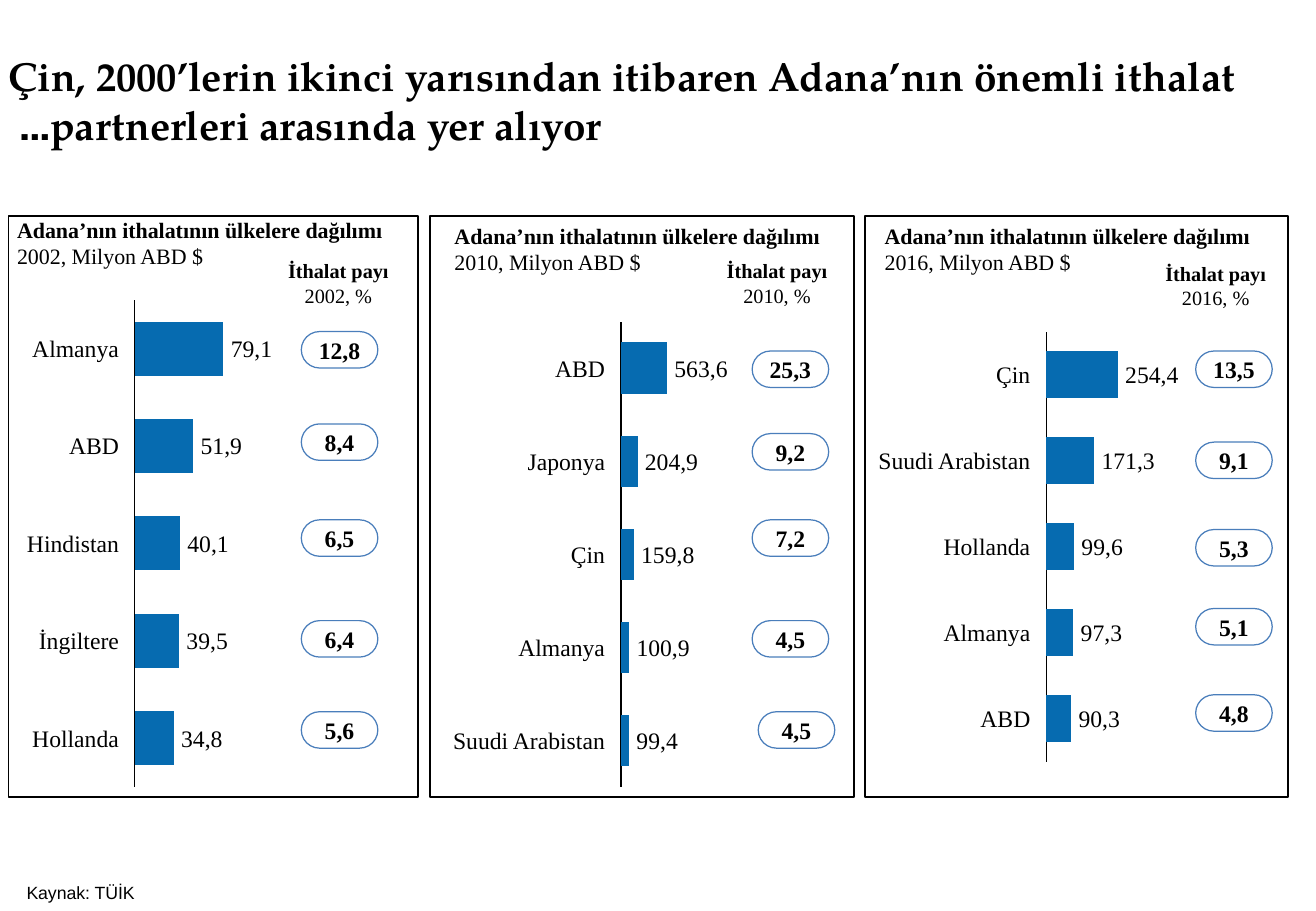
"""Build the slide on Adana's imports by partner country."""
from lxml import etree
from pptx import Presentation
from pptx.chart.data import CategoryChartData
from pptx.dml.color import RGBColor
from pptx.enum.chart import XL_CHART_TYPE, XL_TICK_LABEL_POSITION, XL_TICK_MARK
from pptx.enum.shapes import MSO_SHAPE
from pptx.enum.text import MSO_ANCHOR, PP_ALIGN
from pptx.oxml.ns import qn
from pptx.util import Inches, Pt

BLACK = RGBColor(0x00, 0x00, 0x00)
WHITE = RGBColor(0xFF, 0xFF, 0xFF)
BLUE = RGBColor(0x06, 0x6B, 0xB0)
EDGE = RGBColor(0x4A, 0x7E, 0xBB)
LEFT, MID, RIGHT = PP_ALIGN.LEFT, PP_ALIGN.CENTER, PP_ALIGN.RIGHT
TOP, CENTER = MSO_ANCHOR.TOP, MSO_ANCHOR.MIDDLE
RECT, ROUND = MSO_SHAPE.RECTANGLE, MSO_SHAPE.ROUNDED_RECTANGLE
STACKED = XL_CHART_TYPE.BAR_STACKED
NO_TICK, NO_LABEL = XL_TICK_MARK.NONE, XL_TICK_LABEL_POSITION.NONE
SERIF, SANS, HEAD = "Times New Roman", "Arial", "TeX Gyre Pagella"

MARGIN = 0.09
WIDTHS = {"Almanya": 0.76, "ABD": 0.46, "Hindistan": 0.81, "İngiltere": 0.71,
          "Hollanda": 0.76, "Japonya": 0.69, "Çin": 0.33, "Suudi Arabistan": 1.3}
PANELS = [
    {"year": "2002", "frame": (0.07, 3.37), "chart": (1.02, 2.38, 0.91, 4.19),
     "head": (0.14, 1.78), "share": (2.19, 2.13),
     "rows": [("Almanya", 100, "79,1", "12,8", 2.48, 2.73),
              ("ABD", 66, "51,9", "8,4", 2.48, 3.49),
              ("Hindistan", 51, "40,1", "6,5", 2.48, 4.28),
              ("İngiltere", 50, "39,5", "6,4", 2.48, 5.11),
              ("Hollanda", 44, "34,8", "5,6", 2.48, 5.86)]},
    {"year": "2010", "frame": (3.54, 3.49), "chart": (5.02, 2.56, 0.56, 4.01),
     "head": (3.74, 1.83), "share": (5.8, 2.13),
     "rows": [("ABD", 100, "563,6", "25,3", 6.19, 2.89),
              ("Japonya", 36, "204,9", "9,2", 6.19, 3.57),
              ("Çin", 28, "159,8", "7,2", 6.19, 4.28),
              ("Almanya", 18, "100,9", "4,5", 6.19, 5.11),
              ("Suudi Arabistan", 18, "99,4", "4,5", 6.24, 5.86)]},
    {"year": "2016", "frame": (7.12, 3.48), "chart": (8.52, 2.64, 0.77, 3.72),
     "head": (7.28, 1.83), "share": (9.41, 2.15),
     "rows": [("Çin", 100, "254,4", "13,5", 9.84, 2.89),
              ("Suudi Arabistan", 67, "171,3", "9,1", 9.84, 3.64),
              ("Hollanda", 39, "99,6", "5,3", 9.84, 4.36),
              ("Almanya", 38, "97,3", "5,1", 9.84, 5.01),
              ("ABD", 35, "90,3", "4,8", 9.84, 5.72)]},
]


class Slide:
    """Hold the current slide and draw its elements in one style."""

    def __init__(self, deck):
        self.shapes = deck.slides.add_slide(deck.slide_layouts[6]).shapes

    def fill(self, shape, lines, size, bold=(False,), font=SERIF, align=LEFT,
             anchor=TOP, pad=(0, 0), wrap=True):
        frame = shape.text_frame
        frame.text = "\n".join(lines)
        frame.word_wrap = wrap
        frame.vertical_anchor = anchor
        frame.margin_left = frame.margin_right = Inches(pad[0])
        frame.margin_top = frame.margin_bottom = Inches(pad[1])
        for para, heavy in zip(frame.paragraphs, bold):
            para.alignment = align
            for run in para.runs:
                run.font.name = font
                run.font.size = Pt(size)
                run.font.bold = heavy
                run.font.color.rgb = BLACK
        return frame

    def text(self, box, lines, size, **style):
        shape = self.shapes.add_textbox(*map(Inches, box))
        return self.fill(shape, lines, size, **style)

    def shape(self, kind, box, line, width):
        shape = self.shapes.add_shape(kind, *map(Inches, box))
        shape.shadow.inherit = False
        shape.fill.background()
        shape.line.color.rgb = line
        shape.line.width = Pt(width)
        return shape

    def pill(self, left, top, share):
        shape = self.shape(ROUND, (left, top, 0.63, 0.3), EDGE, 0.75)
        shape.adjustments[0] = 0.5
        shape.fill.solid()
        shape.fill.fore_color.rgb = WHITE
        self.fill(shape, [share], 14, bold=(True,), align=MID, anchor=CENTER, wrap=False)

    def chart(self, box, vals):
        data = CategoryChartData()
        data.categories = [str(n + 1) for n in range(len(vals))]
        data.add_series("Series 1", vals)
        chart = self.shapes.add_chart(STACKED, *map(Inches, box), data).chart
        chart.has_legend = chart.has_title = False
        chart.font.name, chart.font.size = SANS, Pt(10)
        chart.font.color.rgb = BLACK
        cat, val = chart.category_axis, chart.value_axis
        cat.reverse_order = True
        cat.tick_label_position = NO_LABEL
        cat.major_tick_mark = cat.minor_tick_mark = NO_TICK
        cat.format.line.color.rgb = BLACK
        cat.format.line.width = Pt(0.75)
        val.minimum_scale, val.maximum_scale = 0, 100
        val.has_major_gridlines = val.visible = False
        plot = chart.plots[0]
        plot.gap_width, plot.overlap = 80, 100
        plot.vary_by_categories = False
        bars = plot.series[0].format.fill
        bars.solid()
        bars.fore_color.rgb = BLUE
        self.place(chart, box[2], box[3])

    def place(self, chart, wide, high):
        area = chart._chartSpace.chart.plotArea
        for old in area.findall(qn("c:layout")):
            area.remove(old)
        layout = etree.Element(qn("c:layout"))
        area.insert(0, layout)
        manual = etree.SubElement(layout, qn("c:manualLayout"))
        x, y = MARGIN / wide, MARGIN / high
        for tag, value in (("layoutTarget", "inner"), ("xMode", "edge"),
                           ("yMode", "edge"), ("x", x), ("y", y),
                           ("w", 1 - 2 * x), ("h", 1 - 2 * y)):
            etree.SubElement(manual, qn("c:" + tag)).set("val", str(value))

    def panel(self, year, frame, chart, head, share, rows):
        left, top, wide, high = chart
        self.chart(chart, [row[1] for row in rows])
        step = (high - 2 * MARGIN) / len(rows)
        for n, (name, bar, value, _, _, _) in enumerate(rows):
            y = top + MARGIN + step * (n + 0.5) - 0.12
            span = WIDTHS[name]
            self.text((left - 0.04 - span, y, span, 0.23), [name], 14,
                      align=RIGHT, anchor=CENTER)
            x = left + MARGIN + (wide - 2 * MARGIN) * bar / 100 + 0.03
            self.text((x, y, 0.09 * len(value) + 0.1, 0.23), [value], 14,
                      anchor=CENTER, pad=(0.03, 0))
        self.text((*share, 1.19, 0.4), ["İthalat payı", f"{year}, %"], 12,
                  bold=(True, False), align=MID)
        self.text((*head, 3.22, 0.44),
                  ["Adana’nın ithalatının ülkelere dağılımı", f"{year}, Milyon ABD $"],
                  13, bold=(True, False))
        self.shape(RECT, (frame[0], 1.78, frame[1], 4.78), BLACK, 1)
        for _, _, _, part, x, y in rows:
            self.pill(x, y, part)


def main():
    deck = Presentation()
    deck.slide_width, deck.slide_height = Inches(10.83), Inches(7.5)
    slide = Slide(deck)
    title = slide.text((0.07, 0.42, 10.76, 0.92),
                       ["Çin, 2000’lerin ikinci yarısından itibaren Adana’nın önemli "
                        "ithalat partnerleri arasında yer alıyor... "],
                       24, bold=(True,), font=HEAD)
    title.paragraphs[0]._p.get_or_add_pPr().set("rtl", "1")
    for panel in PANELS:
        slide.panel(**panel)
    slide.text((0.12, 7.19, 8.33, 0.31), ["Kaynak: TÜİK"], 10.5, font=SANS,
               anchor=CENTER, pad=(0.1, 0.05))
    deck.save("out.pptx")


if __name__ == "__main__":
    main()
